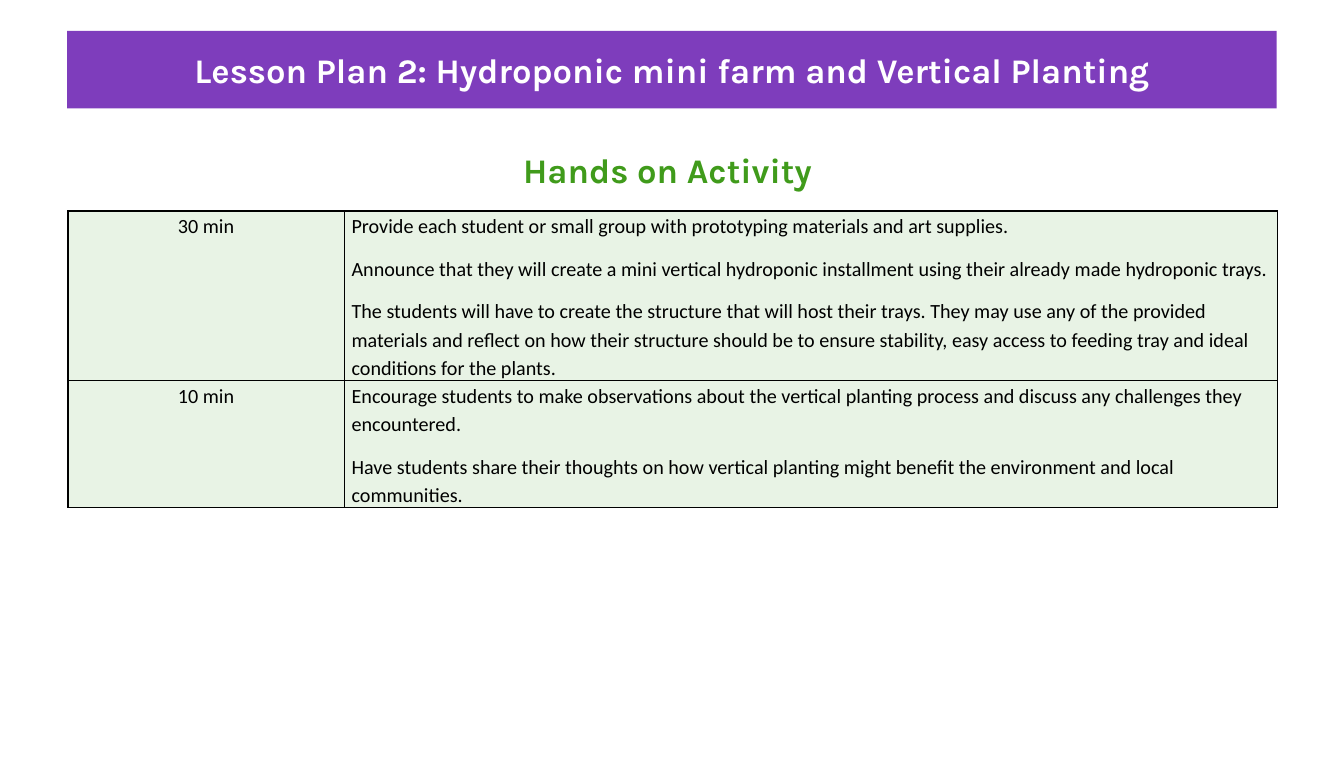
"""Build the lesson plan slide with its timed hands-on activity table."""
from dataclasses import dataclass

from lxml import etree
from pptx import Presentation
from pptx.dml.color import RGBColor
from pptx.enum.text import MSO_ANCHOR, MSO_AUTO_SIZE, PP_ALIGN
from pptx.oxml.ns import qn
from pptx.slide import Slide
from pptx.table import _Cell
from pptx.text.text import TextFrame
from pptx.util import Cm, Pt

PURPLE = RGBColor(0x7E, 0x3D, 0xBC)
GREEN = RGBColor(0x40, 0x9B, 0x1B)
PALE_GREEN = RGBColor(0xE8, 0xF3, 0xE5)
WHITE = RGBColor(0xFF, 0xFF, 0xFF)
BLACK = RGBColor(0x00, 0x00, 0x00)
CENTER, LEFT = PP_ALIGN.CENTER, PP_ALIGN.LEFT
TOP, MIDDLE = MSO_ANCHOR.TOP, MSO_ANCHOR.MIDDLE
NO_AUTOFIT = MSO_AUTO_SIZE.NONE
TITLE_ONLY = 5
BORDER_SIDES = ("a:lnL", "a:lnR", "a:lnT", "a:lnB")


@dataclass(frozen=True)
class Activity:
    duration: str
    steps: tuple[str, ...]
    height: float


ACTIVITIES = (
    Activity("30 min", (
        "Provide each student or small group with prototyping materials and art supplies.",
        "Announce that they will create a mini vertical hydroponic installment using their "
        "already made hydroponic trays.",
        "The students will have to create the structure that will host their trays. They may "
        "use any of the provided materials and reflect on how their structure should be to "
        "ensure stability, easy access to feeding tray and ideal conditions for the plants.",
    ), 4.16),
    Activity("10 min", (
        "Encourage students to make observations about the vertical planting process and "
        "discuss any challenges they encountered.",
        "Have students share their thoughts on how vertical planting might benefit the "
        "environment and local communities.",
    ), 3.12),
)


def write_heading(frame: TextFrame, text: str, color: RGBColor, anchor: MSO_ANCHOR) -> None:
    """Write one centred bold heading line."""
    frame.text = text
    frame.word_wrap = True
    frame.auto_size = NO_AUTOFIT
    frame.vertical_anchor = anchor
    paragraph = frame.paragraphs[0]
    paragraph.alignment = CENTER
    font = paragraph.runs[0].font
    font.name, font.size, font.bold = "Karla", Pt(24), True
    font.color.rgb = color


def add_borders(cell: _Cell) -> None:
    """Draw a thin black line on every side of a cell."""
    properties = cell._tc.get_or_add_tcPr()
    for side in BORDER_SIDES:
        line = etree.SubElement(properties, qn(side), w=str(Pt(1)))
        fill = etree.SubElement(line, qn("a:solidFill"))
        etree.SubElement(fill, qn("a:srgbClr"), val=str(BLACK))


def fill_cell(cell: _Cell, lines: tuple[str, ...], alignment: PP_ALIGN) -> None:
    """Write the lines into a bordered pale green cell."""
    add_borders(cell)
    cell.fill.solid()
    cell.fill.fore_color.rgb = PALE_GREEN
    cell.margin_left = cell.margin_right = Cm(0.18)
    cell.margin_top = cell.margin_bottom = Cm(0)
    cell.text_frame.text = "\n".join(lines)
    for paragraph in cell.text_frame.paragraphs:
        paragraph.alignment = alignment
        paragraph.line_spacing = 1.15
        paragraph.space_after = Pt(10)
        font = paragraph.runs[0].font
        font.name, font.size = "Calibri", Pt(14)
        font.color.rgb = BLACK


def add_schedule(slide: Slide, activities: tuple[Activity, ...]) -> None:
    """Add the table of durations and steps."""
    total_height = sum(activity.height for activity in activities)
    schedule = slide.shapes.add_table(
        len(activities), 2, Cm(1.67), Cm(5.18), Cm(29.69), Cm(total_height)).table
    schedule.first_row = schedule.horz_banding = False
    schedule.columns[0].width = Cm(6.78)
    schedule.columns[1].width = Cm(22.91)
    for row, activity in zip(schedule.rows, activities):
        row.height = Cm(activity.height)
        fill_cell(row.cells[0], (activity.duration,), CENTER)
        fill_cell(row.cells[1], activity.steps, LEFT)


def main() -> None:
    """Build and save the slide."""
    deck = Presentation()
    deck.slide_width, deck.slide_height = Cm(32.99), Cm(19.05)
    slide = deck.slides.add_slide(deck.slide_layouts[TITLE_ONLY])

    lesson_title = slide.shapes.title
    lesson_title.left, lesson_title.top = Cm(1.65), Cm(0.76)
    lesson_title.width, lesson_title.height = Cm(29.69), Cm(1.9)
    lesson_title.fill.solid()
    lesson_title.fill.fore_color.rgb = PURPLE
    write_heading(lesson_title.text_frame,
                  "Lesson Plan 2: Hydroponic mini farm and Vertical Planting", WHITE, MIDDLE)

    section_heading = slide.shapes.add_textbox(Cm(1.4), Cm(3.53), Cm(29.97), Cm(1.27))
    write_heading(section_heading.text_frame, "Hands on Activity", GREEN, TOP)

    add_schedule(slide, ACTIVITIES)
    deck.save("out.pptx")


if __name__ == "__main__":
    main()
